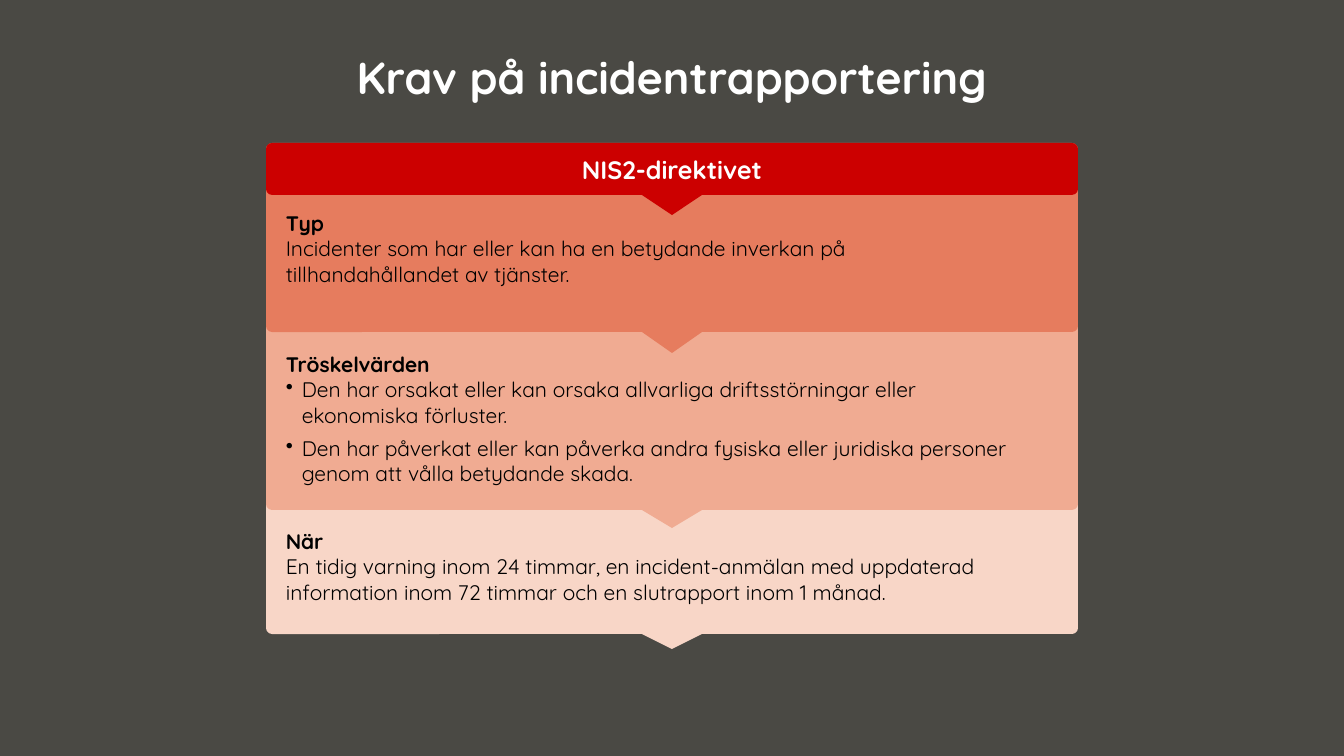
from dataclasses import dataclass

from lxml import etree
from pptx import Presentation
from pptx.dml.color import RGBColor
from pptx.enum.shapes import MSO_SHAPE
from pptx.enum.text import MSO_ANCHOR, PP_ALIGN
from pptx.oxml.ns import qn
from pptx.util import Emu, Pt

ROUNDED = MSO_SHAPE.ROUNDED_RECTANGLE
TRIANGLE = MSO_SHAPE.ISOSCELES_TRIANGLE
TOP, MIDDLE, BOTTOM = MSO_ANCHOR.TOP, MSO_ANCHOR.MIDDLE, MSO_ANCHOR.BOTTOM
LEFT, CENTER = PP_ALIGN.LEFT, PP_ALIGN.CENTER

EMU_PER_PX = 914400 / 100.8
SLIDE_WIDTH, SLIDE_HEIGHT = 1344, 756
BAND_WIDTH = 812
BAND_LEFT = (SLIDE_WIDTH - BAND_WIDTH) // 2
CORNER = 6
POINTER_WIDTH = 60
BULLET_INDENT = 16


@dataclass(frozen=True)
class Theme:
    font: str = "Quicksand"
    background: str = "4A4944"
    light: str = "FFFFFF"
    dark: str = "000000"
    header: str = "CC0000"
    kind: str = "E67C5E"
    thresholds: str = "F0AB92"
    timing: str = "F8D6C7"
    title_size: int = 32
    header_size: int = 18
    body_size: int = 15


THEME = Theme()


def px(length):
    return Emu(round(length * EMU_PER_PX))


def paint(fill, color):
    fill.solid()
    fill.fore_color.rgb = RGBColor.from_string(color)


def set_frame(frame, insets, anchor):
    frame.word_wrap = True
    frame.vertical_anchor = anchor
    (frame.margin_left, frame.margin_top,
     frame.margin_right, frame.margin_bottom) = map(px, insets)


def write(paragraph, text, size, color, bold=False, align=LEFT):
    paragraph.text = text
    paragraph.alignment = align
    paragraph.font.name = THEME.font
    paragraph.font.size = Pt(size)
    paragraph.font.bold = bold
    paragraph.font.color.rgb = RGBColor.from_string(color)


def add_bullet(paragraph):
    properties = paragraph._p.get_or_add_pPr()
    properties.set("marL", str(px(BULLET_INDENT)))
    properties.set("indent", str(-px(BULLET_INDENT)))
    etree.SubElement(properties, qn("a:buChar")).set("char", "•")


def add_plain_shape(slide, preset, left, top, width, height, color):
    shape = slide.shapes.add_shape(preset, px(left), px(top), px(width), px(height))
    shape.shadow.inherit = False
    paint(shape.fill, color)
    shape.line.fill.background()
    return shape


def add_band(slide, top, bottom, pointer_height, color, insets, anchor):
    height = bottom - top
    band = add_plain_shape(slide, ROUNDED, BAND_LEFT, top, BAND_WIDTH, height, color)
    band.adjustments[0] = CORNER / height
    set_frame(band.text_frame, insets, anchor)
    pointer = add_plain_shape(slide, TRIANGLE, (SLIDE_WIDTH - POINTER_WIDTH) / 2,
                              bottom, POINTER_WIDTH, pointer_height, color)
    pointer.rotation = 180
    return band.text_frame


def write_requirement(frame, heading, statements, bulleted=False):
    write(frame.paragraphs[0], heading, THEME.body_size, THEME.dark, bold=True)
    for number, statement in enumerate(statements, 1):
        paragraph = frame.add_paragraph()
        if bulleted:
            add_bullet(paragraph)
        if number < len(statements):
            paragraph.space_after = Pt(6)
        write(paragraph, statement, THEME.body_size, THEME.dark)


def add_title(slide, text):
    title = slide.shapes.add_textbox(px(93), px(52), px(1158), px(56)).text_frame
    set_frame(title, (0, 0, 0, 0), MIDDLE)
    title.paragraphs[0].line_spacing = 0.9
    write(title.paragraphs[0], text, THEME.title_size, THEME.light, True, CENTER)


def main():
    presentation = Presentation()
    presentation.slide_width = px(SLIDE_WIDTH)
    presentation.slide_height = px(SLIDE_HEIGHT)
    slide = presentation.slides.add_slide(presentation.slide_layouts[6])
    paint(slide.background.fill, THEME.background)

    add_title(slide, "Krav på incidentrapportering")

    timing = add_band(slide, 490, 634, 15, THEME.timing, (18, 37, 18, 24), TOP)
    write_requirement(timing, "När", [
        "En tidig varning inom 24 timmar, en incident-anmälan med uppdaterad "
        "information inom 72 timmar och en slutrapport inom 1 månad.",
    ])

    thresholds = add_band(slide, 296, 510, 18, THEME.thresholds, (18, 3, 57, 22), BOTTOM)
    write_requirement(thresholds, "Tröskelvärden", [
        "Den har orsakat eller kan orsaka allvarliga driftsstörningar eller "
        "ekonomiska förluster.",
        "Den har påverkat eller kan påverka andra fysiska eller juridiska personer "
        "genom att vålla betydande skada.",
    ], bulleted=True)

    kind = add_band(slide, 143, 332, 21, THEME.kind, (18, 66, 101, 24), TOP)
    write_requirement(kind, "Typ", [
        "Incidenter som har eller kan ha en betydande inverkan på "
        "tillhandahållandet av tjänster.",
    ])

    header = add_band(slide, 143, 195, 20, THEME.header, (8, 3, 8, 3), MIDDLE)
    write(header.paragraphs[0], "NIS2-direktivet", THEME.header_size, THEME.light,
          True, CENTER)

    presentation.save("out.pptx")


if __name__ == "__main__":
    main()
